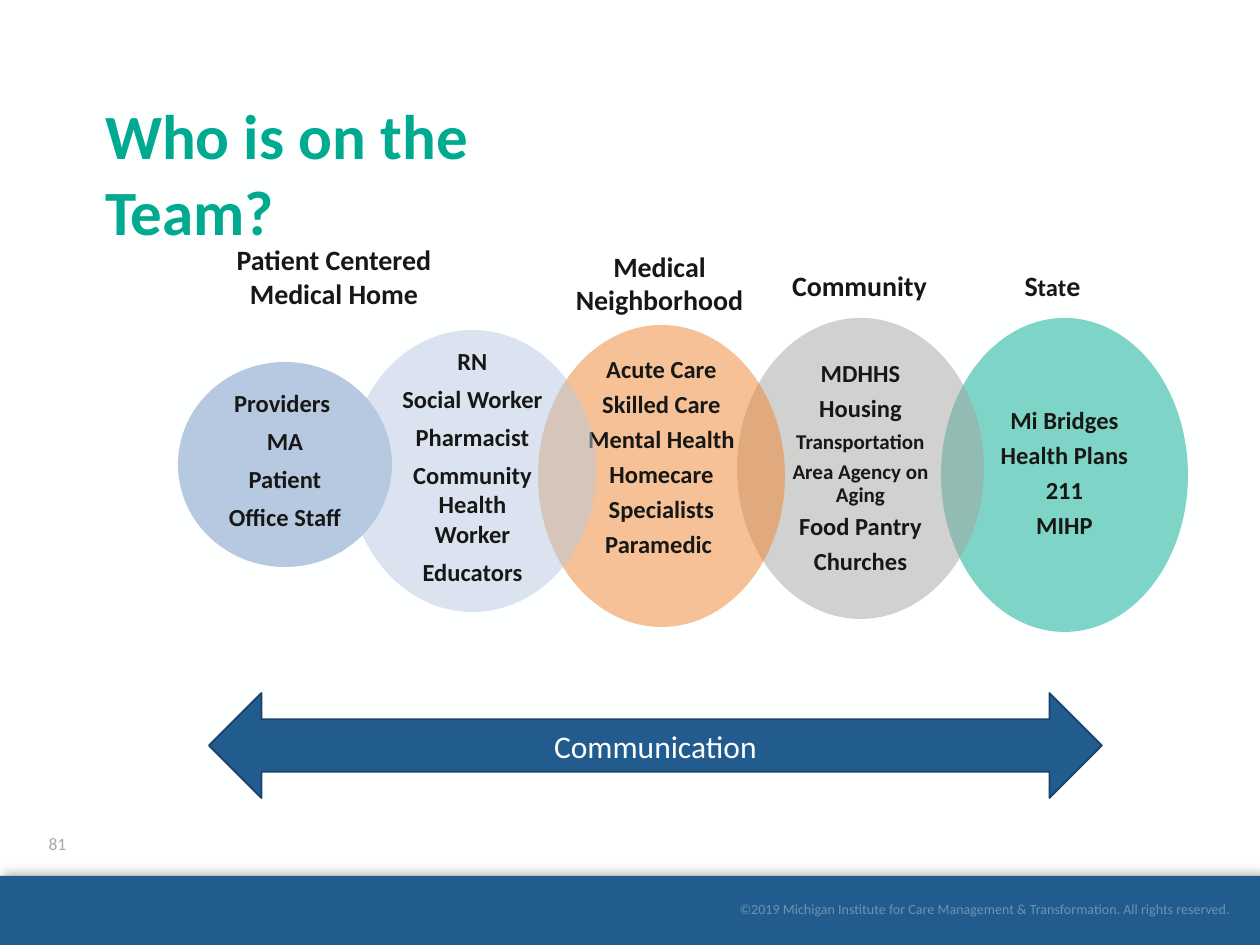
from collections import namedtuple
from dataclasses import dataclass

from lxml.etree import SubElement
from pptx import Presentation
from pptx.dml.color import RGBColor
from pptx.enum.shapes import MSO_SHAPE as Preset
from pptx.enum.text import MSO_ANCHOR as Anchor, PP_ALIGN as Align
from pptx.oxml.ns import qn
from pptx.util import Pt

EMU_PER_PX = 914400 / 126

Box = namedtuple("Box", "left top width height")
Circle = namedtuple("Circle", "box color opacity text_width lift line_spacing lines")


@dataclass(frozen=True)
class Theme:
    font: str = "Calibri"
    paper: str = "FEFFFF"
    ink: str = "171816"
    teal: str = "00AA90"
    navy: str = "225B8D"
    navy_edge: str = "194368"
    muted: str = "A8A8A8"
    pale_blue: str = "B7C9E1"
    orange: str = "F0842E"
    gray: str = "A6A4A3"
    title: int = 36
    banner: int = 18
    heading: int = 16
    body: int = 14
    small: int = 12
    number: int = 10
    credit: int = 8


THEME = Theme()


def px(length):
    return round(length * EMU_PER_PX)


def place(box):
    return [px(length) for length in box]


def set_alpha(fill, percent):
    color = fill._xPr.find(qn("a:solidFill"))[0]
    SubElement(color, qn("a:alpha"), val=str(percent * 1000))


def add_span(para, text, size, color, bold=False, opacity=100):
    span = para.add_run()
    span.text = text
    span.font.name = THEME.font
    span.font.size = Pt(size)
    span.font.bold = bold
    span.font.fill.solid()
    span.font.fill.fore_color.rgb = RGBColor.from_string(color)
    if opacity < 100:
        set_alpha(span.font.fill, opacity)


def add_text_frame(page, box, anchor=Anchor.TOP, insets=(13, 6, 13, 6)):
    frame = page.shapes.add_textbox(*place(box)).text_frame
    frame.word_wrap = True
    frame.vertical_anchor = anchor
    frame.margin_left, frame.margin_top, frame.margin_right, frame.margin_bottom = place(insets)
    return frame


def add_solid(page, preset, box, color, opacity=100):
    shape = page.shapes.add_shape(preset, *place(box))
    shape.shadow.inherit = False
    shape.fill.solid()
    shape.fill.fore_color.rgb = RGBColor.from_string(color)
    shape.line.fill.background()
    if opacity < 100:
        set_alpha(shape.fill, opacity)
    return shape


def add_footer(page, box):
    bar = add_solid(page, Preset.RECTANGLE, box, THEME.navy)
    effects = bar._element.spPr.find(qn("a:effectLst"))
    shadow = SubElement(effects, qn("a:outerShdw"), blurRad=str(Pt(6)), dist=str(Pt(3)),
                        dir="18900000", algn="bl", rotWithShape="0")
    SubElement(SubElement(shadow, qn("a:srgbClr"), val="000000"), qn("a:alpha"), val="25000")

    credit_box = Box(box.left + 624, box.top + 16, 607, 34)
    credit = add_text_frame(page, credit_box, Anchor.MIDDLE, (13, 6, 0, 6)).paragraphs[0]
    credit.alignment = Align.RIGHT
    add_span(credit, "©2019 Michigan Institute for Care Management & Transformation. "
             "All rights reserved.", THEME.credit, THEME.paper, opacity=35)

    number_box = Box(box.left + 31, box.top - 57, 53, 50)
    number = add_text_frame(page, number_box, Anchor.MIDDLE, (0, 6, 0, 6)).paragraphs[0]
    number.alignment = Align.CENTER
    add_span(number, "81", THEME.number, THEME.muted)


def add_title(page, box):
    para = add_text_frame(page, box).paragraphs[0]
    add_span(para, "Who is on the Team?", THEME.title, THEME.teal, bold=True)


def add_heading(page, box, spans):
    para = add_text_frame(page, box).paragraphs[0]
    para.alignment = Align.CENTER
    for text, size in spans:
        add_span(para, text, size, THEME.ink, bold=True)


def add_circle(page, circle):
    """Draw one care circle with its members centred, raised by its lift."""
    box = circle.box
    add_solid(page, Preset.OVAL, box, circle.color, circle.opacity)
    text_box = Box(box.left + (box.width - circle.text_width) / 2, box.top - circle.lift,
                   circle.text_width, box.height)
    frame = add_text_frame(page, text_box, Anchor.MIDDLE, (14, 2, 14, 2))
    for index, (text, size) in enumerate(circle.lines):
        para = frame.add_paragraph() if index else frame.paragraphs[0]
        para.alignment = Align.CENTER
        para.line_spacing = circle.line_spacing
        para.space_after = Pt(0.35 * size)
        add_span(para, text, size, THEME.ink, bold=True)


def add_banner(page, box):
    arrow = add_solid(page, Preset.LEFT_RIGHT_ARROW, box, THEME.navy)
    arrow.line.color.rgb = RGBColor.from_string(THEME.navy_edge)
    arrow.line.width = Pt(1)
    arrow.text_frame.vertical_anchor = Anchor.MIDDLE
    para = arrow.text_frame.paragraphs[0]
    para.alignment = Align.CENTER
    add_span(para, "Communication", THEME.banner, THEME.paper)


def body(*texts):
    return [(text, THEME.body) for text in texts]


def small(*texts):
    return [(text, THEME.small) for text in texts]


# Back to front
CIRCLES = [
    Circle(Box(941, 318, 247, 314), THEME.teal, 50, 175, 1, 0.9,
           body("Mi Bridges", "Health Plans", "211", "MIHP")),
    Circle(Box(737, 318, 247, 301), THEME.gray, 50, 175, 0, 0.9,
           body("MDHHS", "Housing") + small("Transportation", "Area Agency on Aging")
           + body("Food Pantry", "Churches")),
    Circle(Box(538, 325, 247, 302), THEME.orange, 50, 175, 18, 0.9,
           body("Acute Care", "Skilled Care", "Mental Health", "Homecare",
                "Specialists", "Paramedic ")),
    Circle(Box(349, 330, 247, 282), THEME.pale_blue, 50, 175, 5, 1.0,
           body("RN", "Social Worker", "Pharmacist", "Community Health Worker", "Educators")),
    Circle(Box(178, 362, 214, 205), THEME.pale_blue, 100, 151, 5, 1.0,
           body("Providers ", "MA", "Patient", "Office Staff")),
]

HEADINGS = [
    (Box(178, 237, 312, 81), [("Patient Centered Medical Home", THEME.heading)]),
    (Box(543, 243, 233, 81), [("Medical Neighborhood", THEME.heading)]),
    (Box(762, 262, 195, 47), [("Community", THEME.heading)]),
    (Box(951, 262, 203, 47),
     [("S", THEME.heading), ("tat", THEME.body), ("e", THEME.heading)]),
]


def main():
    deck = Presentation()
    deck.slide_width, deck.slide_height = px(1260), px(945)
    page = deck.slides.add_slide(deck.slide_layouts[6])
    page.background.fill.solid()
    page.background.fill.fore_color.rgb = RGBColor.from_string(THEME.paper)

    add_footer(page, Box(0, 876, 1260, 69))
    for circle in CIRCLES:
        add_circle(page, circle)
    for box, spans in HEADINGS:
        add_heading(page, box, spans)
    add_title(page, Box(92, 91, 511, 165))
    add_banner(page, Box(209, 693, 893, 105))
    deck.save("out.pptx")


if __name__ == "__main__":
    main()
